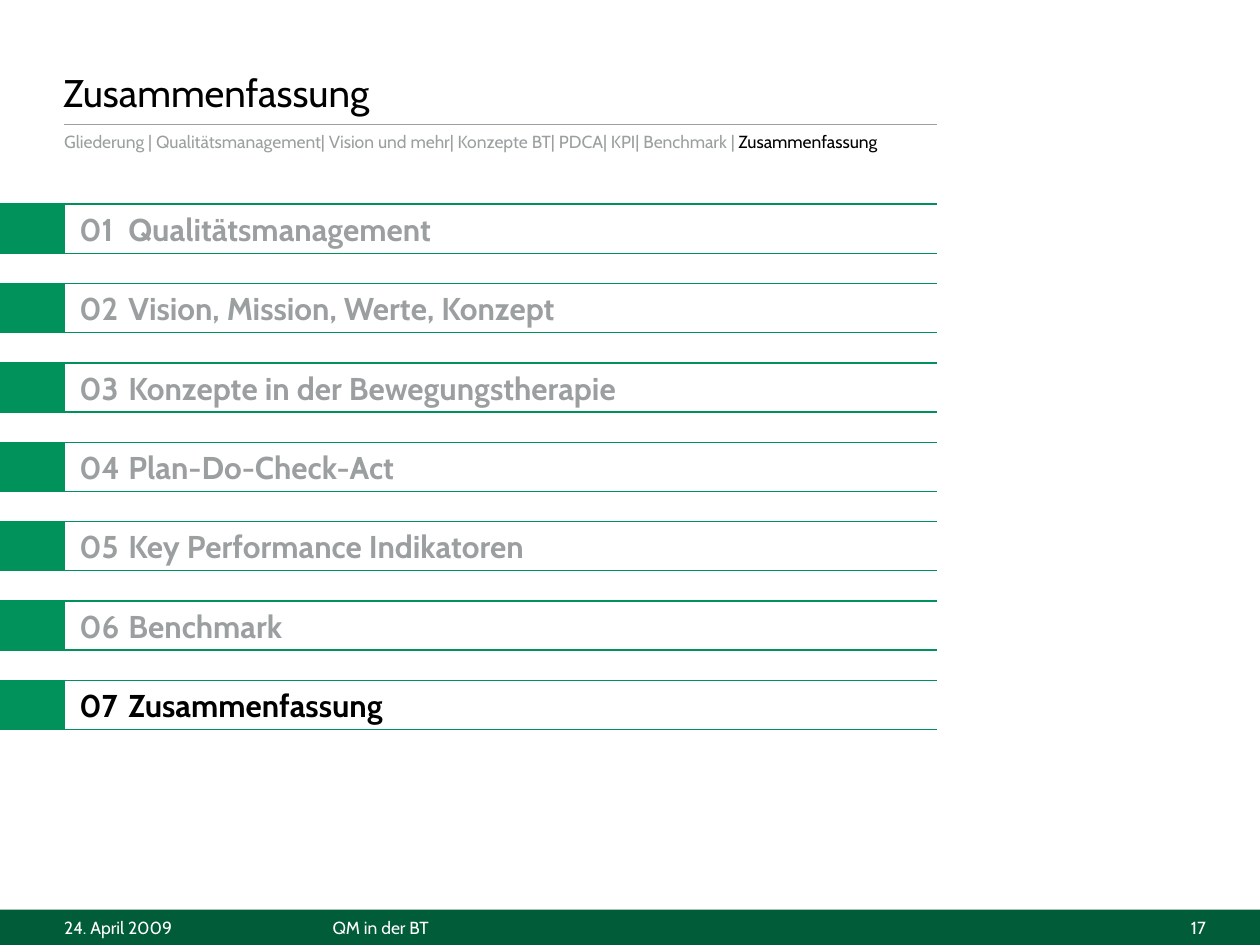
from dataclasses import dataclass

from lxml.etree import SubElement
from pptx import Presentation
from pptx.dml.color import RGBColor
from pptx.enum.shapes import MSO_CONNECTOR as Connector, MSO_SHAPE as Shape
from pptx.enum.text import MSO_ANCHOR as Anchor, PP_ALIGN as Align
from pptx.oxml.ns import qn
from pptx.util import Inches, Pt


@dataclass(frozen=True)
class Theme:
    """Colours, font and type sizes of the slide."""
    font: str = "Cabin"
    green: str = "00925A"
    dark_green: str = "005C39"
    grey: str = "9B9FA0"
    black: str = "000000"
    white: str = "FFFFFF"
    title_size: int = 22
    chapter_size: int = 18
    small_size: int = 10
    rule_width: float = 0.75


THEME = Theme()
MARGIN, RIGHT_EDGE = 0.51, 7.44
CONTENT_WIDTH = RIGHT_EDGE - MARGIN
FIRST_ROW, ROW_PITCH, ROW_HEIGHT = 1.62, 0.63, 0.39
FOOTER_TOP, FOOTER_HEIGHT = 7.22, 0.28
CHAPTERS = [
    "Qualitätsmanagement",
    "Vision, Mission, Werte, Konzept",
    "Konzepte in der Bewegungstherapie",
    "Plan-Do-Check-Act",
    "Key Performance Indikatoren",
    "Benchmark",
    "Zusammenfassung",
]
BREADCRUMB = "Gliederung | Qualitätsmanagement| Vision und mehr| Konzepte BT| PDCA| KPI| Benchmark | "


def add_text(slide, text, box, *, size, color=THEME.black, bold=False, align=Align.LEFT,
             anchor=Anchor.MIDDLE, insets=(0, 0.05, 0, 0.05), hanging=0, wrap=True, highlight=""):
    """Add a one-paragraph text box, with an optional black ending."""
    frame = slide.shapes.add_textbox(*map(Inches, box)).text_frame
    frame.word_wrap = wrap
    frame.vertical_anchor = anchor
    frame.margin_left, frame.margin_top, frame.margin_right, frame.margin_bottom = map(Inches, insets)
    paragraph = frame.paragraphs[0]
    paragraph.alignment = align
    if hanging:
        properties = paragraph._p.get_or_add_pPr()
        properties.set("marL", str(Inches(hanging)))
        properties.set("indent", str(-Inches(hanging)))
    for part, part_color in ((text, color), (highlight, THEME.black)):
        if part:
            run = paragraph.add_run()
            run.text = part
            run.font.name = THEME.font
            run.font.size = Pt(size)
            run.font.bold = bold
            run.font.color.rgb = RGBColor.from_string(part_color)


def add_block(slide, box, color, outlined=False):
    """Add a filled rectangle, outlined in its own colour on request."""
    block = slide.shapes.add_shape(Shape.RECTANGLE, *map(Inches, box))
    block.shadow.inherit = False
    block.fill.solid()
    block.fill.fore_color.rgb = RGBColor.from_string(color)
    if outlined:
        block.line.color.rgb = RGBColor.from_string(color)
        block.line.width = Pt(THEME.rule_width)
    else:
        block.line.fill.background()


def add_rule(slide, left, top, color):
    """Add a horizontal rule that ends at the right edge of the content."""
    rule = slide.shapes.add_connector(
        Connector.STRAIGHT, Inches(left), Inches(top), Inches(RIGHT_EDGE), Inches(top))
    rule.line.color.rgb = RGBColor.from_string(color)
    rule.line.width = Pt(THEME.rule_width)
    SubElement(rule._element.spPr, qn("a:effectLst"))


def add_header(slide):
    """Add the title, its rule and the breadcrumb."""
    add_rule(slide, MARGIN, 0.99, THEME.grey)
    add_text(slide, "Zusammenfassung", (0.5, 0.44, 6.15, 0.55), size=THEME.title_size,
             anchor=Anchor.BOTTOM, insets=(0, 0, 0, 0.08))
    add_text(slide, BREADCRUMB, (MARGIN, 0.99, CONTENT_WIDTH, 0.47), size=THEME.small_size,
             color=THEME.grey, anchor=Anchor.TOP, insets=(0, 0.05, 0.1, 0.05), wrap=False,
             highlight="Zusammenfassung")


def add_chapter(slide, number, name, current):
    """Add one numbered chapter between two rules."""
    top = FIRST_ROW + (number - 1) * ROW_PITCH
    for rule_top in (top, top + ROW_HEIGHT):
        add_rule(slide, 0, rule_top, THEME.green)
    add_block(slide, (0, top, MARGIN, ROW_HEIGHT), THEME.green, outlined=True)
    add_text(slide, f"{number:02}\t{name}", (MARGIN, top, CONTENT_WIDTH, ROW_HEIGHT),
             size=THEME.chapter_size, color=THEME.black if current else THEME.grey, bold=True,
             insets=(0.12, 0, 0, 0), hanging=0.39)


def add_footer(slide):
    """Add the footer band with date, topic and page number."""
    add_block(slide, (0, FOOTER_TOP, 10, FOOTER_HEIGHT), THEME.dark_green)
    for text, left, width, align in (
        ("24. April 2009", MARGIN, 2.08, Align.LEFT),
        ("QM in der BT", 2.64, 6.14, Align.LEFT),
        ("17", 9.02, 0.55, Align.RIGHT),
    ):
        add_text(slide, text, (left, FOOTER_TOP, width, FOOTER_HEIGHT),
                 size=THEME.small_size, color=THEME.white, align=align)


def main():
    """Build and save the summary slide."""
    deck = Presentation()
    deck.slide_width, deck.slide_height = Inches(10), Inches(7.5)
    slide = deck.slides.add_slide(deck.slide_layouts[6])
    add_footer(slide)
    add_header(slide)
    for number, name in enumerate(CHAPTERS, start=1):
        add_chapter(slide, number, name, current=number == len(CHAPTERS))
    deck.save("out.pptx")


if __name__ == "__main__":
    main()
